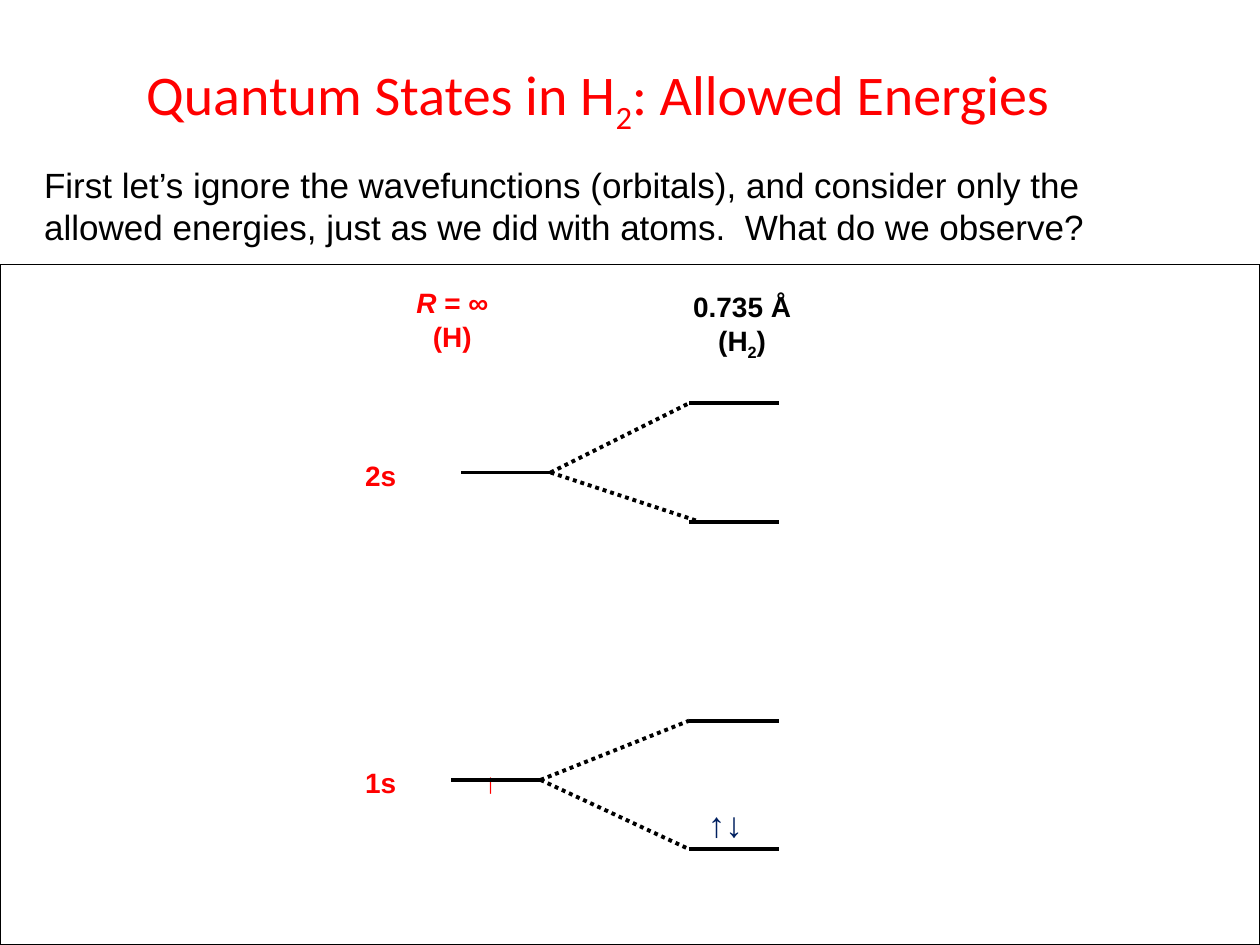
import pptx
import pptx.dml.color
import pptx.enum.dml
import pptx.enum.shapes
import pptx.enum.text
import pptx.oxml
import pptx.oxml.ns
import pptx.util
from pptx.util import Inches

COLORS = {"black": "000000", "white": "FFFFFF", "red": "FF0000", "navy": "002060"}
ALIGN = pptx.enum.text.PP_ALIGN


class Deck:
    font = "Arial"
    title_font = "Calibri"
    line_width = 2.25

    def __init__(self, width, height):
        self.prs = pptx.Presentation()
        self.prs.slide_width = Inches(width)
        self.prs.slide_height = Inches(height)
        self.s = self.prs.slides.add_slide(self.prs.slide_layouts[1])

    def color(self, name):
        return pptx.dml.color.RGBColor.from_string(COLORS[name])

    def place(self, sp, left, top, width, height):
        sp.left, sp.top = Inches(left), Inches(top)
        sp.width, sp.height = Inches(width), Inches(height)

    def set_text(self, sp, paragraphs, size, color, font=None, bold=False,
                 align=ALIGN.LEFT, wrap=True):
        tf = sp.text_frame
        tf.word_wrap = wrap
        tf.auto_size = pptx.enum.text.MSO_AUTO_SIZE.SHAPE_TO_FIT_TEXT
        tf.vertical_anchor = pptx.enum.text.MSO_ANCHOR.TOP
        for i, runs in enumerate(paragraphs):
            p = tf.add_paragraph() if i else tf.paragraphs[0]
            p.alignment = align
            p.space_before = pptx.util.Pt(0)
            for text, style in runs:
                r = p.add_run()
                r.text = text
                r.font.name = font or self.font
                r.font.size = pptx.util.Pt(size)
                r.font.bold = bold
                r.font.italic = style == "italic"
                r.font.color.rgb = self.color(color)
                if style == "sub":
                    r._r.get_or_add_rPr().set("baseline", "-25000")

    def title(self, box, runs):
        sp = self.s.shapes.title
        self.place(sp, *box)
        self.set_text(sp, [runs], 32, "red", font=self.title_font, align=ALIGN.CENTER)

    def body(self, box, text):
        sp = self.s.placeholders[1]
        self.place(sp, *box)
        self.set_text(sp, [[(text, "")]], 20, "black")
        pPr = sp.text_frame.paragraphs[0]._p.get_or_add_pPr()
        pPr.set("marL", "0")
        pPr.set("indent", "0")
        pPr.append(pptx.oxml.parse_xml(
            "<a:buNone %s/>" % pptx.oxml.ns.nsdecls("a")))

    def panel(self, box):
        sp = self.s.shapes.add_shape(
            pptx.enum.shapes.MSO_SHAPE.RECTANGLE, *map(Inches, box))
        sp.shadow.inherit = False
        sp.fill.solid()
        sp.fill.fore_color.rgb = self.color("white")
        sp.line.color.rgb = self.color("black")
        sp.line.width = pptx.util.Pt(0.75)

    def label(self, box, paragraphs, color, size=16, **options):
        sp = self.s.shapes.add_textbox(*map(Inches, box))
        self.set_text(sp, paragraphs, size, color, bold=True, **options)

    def line(self, x1, y1, x2, y2, dotted=False):
        sp = self.s.shapes.add_connector(
            pptx.enum.shapes.MSO_CONNECTOR.STRAIGHT, *map(Inches, (x1, y1, x2, y2)))
        sp.line.color.rgb = self.color("black")
        sp.line.width = pptx.util.Pt(self.line_width)
        if dotted:
            sp.line.dash_style = pptx.enum.dml.MSO_LINE.ROUND_DOT
        sp._element.spPr.append(pptx.oxml.parse_xml(
            "<a:effectLst %s/>" % pptx.oxml.ns.nsdecls("a")))


def main():
    deck = Deck(10, 7.5)
    deck.title((0.33, 0.42, 8.83, 0.64), [
        ("Quantum States in H", ""), ("2", "sub"), (": Allowed Energies", "")])
    deck.body((0.25, 1.25, 9.08, 0.77),
              "First let’s ignore the wavefunctions (orbitals), and consider only the "
              "allowed energies, just as we did with atoms.  What do we observe?")
    deck.panel((0, 2.1, 10, 5.4))

    deck.label((3.09, 2.22, 1, 0.64),
               [[("R", "italic"), (" = ∞", "")], [("(H)", "")]],
               "red", align=ALIGN.CENTER)
    deck.label((5.39, 2.25, 1, 0.64),
               [[("0.735 Å", "")], [("(H", ""), ("2", "sub"), (")", "")]],
               "black", align=ALIGN.CENTER)
    deck.label((3.74, 6.03, 0.5, 0.37), [[("↑", "")]], "red")

    level_width = 0.71
    molecule_x = 5.47
    orbitals = [
        ("1s", 3.58, 6.19, [(5.47, 5.72), (5.47, 6.74)]),
        ("2s", 3.66, 3.75, [(5.47, 3.2), (5.55, 4.14)]),
    ]
    for name, atom_x, atom_y, splits in orbitals:
        deck.label((2.8, atom_y - 0.16, 0.58, 0.37), [[(name, "")]], "red")
        atom_end = atom_x + level_width
        deck.line(atom_x, atom_y, atom_end, atom_y)
        for split_x, split_y in splits:
            deck.line(molecule_x, split_y, molecule_x + level_width, split_y)
            deck.line(atom_end, atom_y, split_x, split_y, dotted=True)

    deck.label((5.52, 6.32, 0.54, 0.44), [[("↑↓", "")]], "navy", size=20, wrap=False)
    deck.prs.save("out.pptx")


if __name__ == "__main__":
    main()
